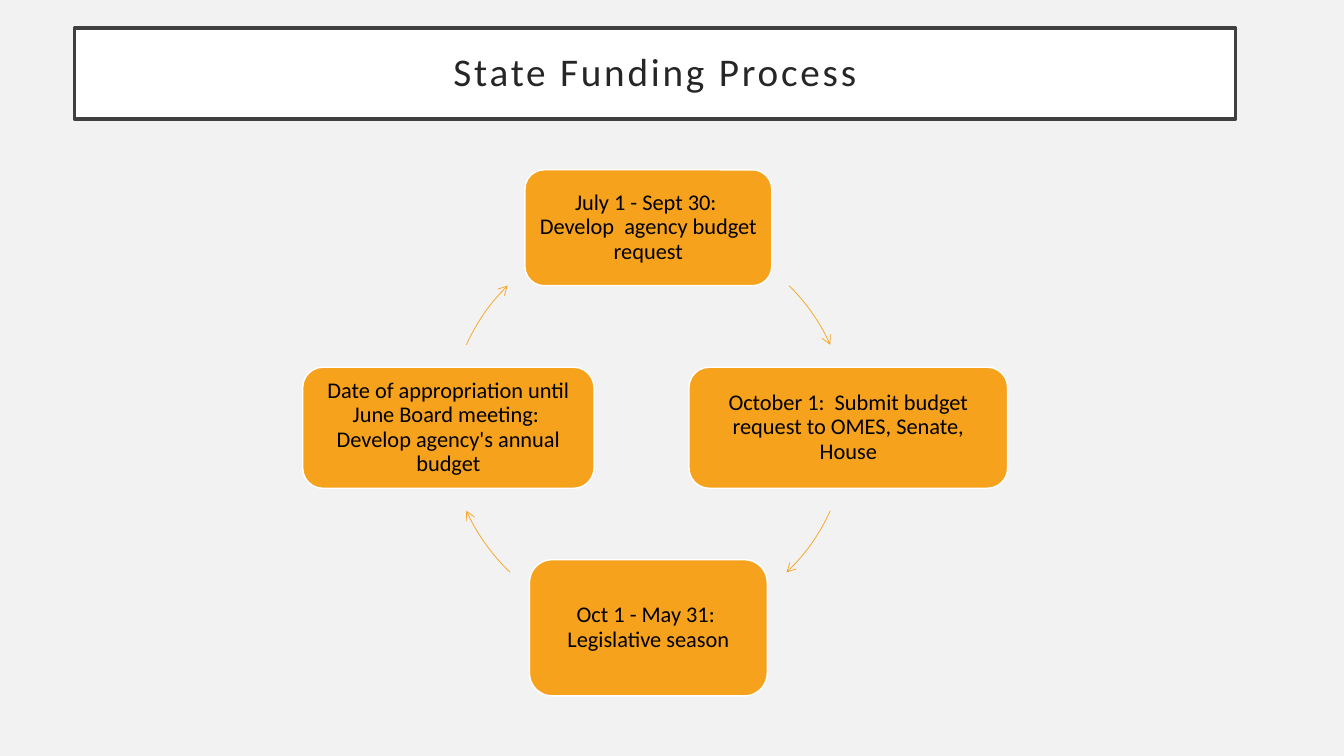
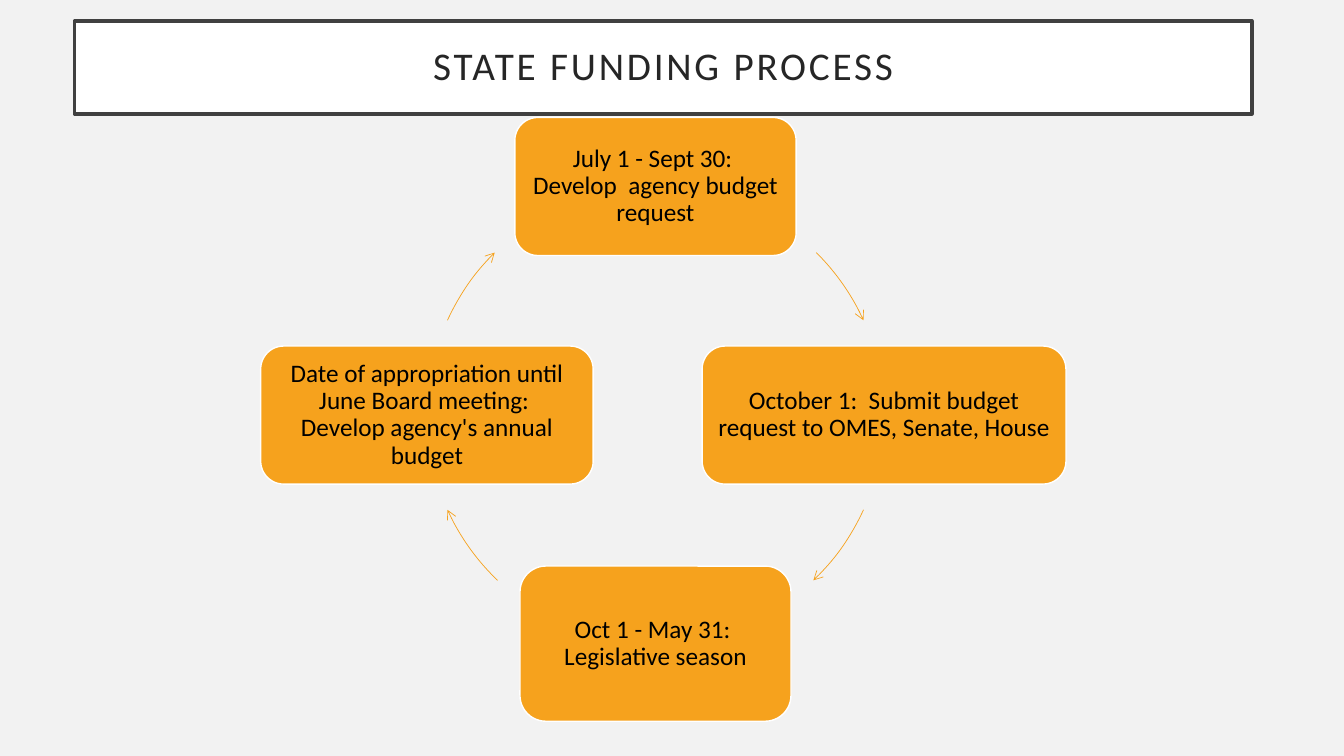
from math import cos, radians, sin

from pptx import Presentation
from pptx.dml.color import RGBColor
from pptx.enum.shapes import MSO_SHAPE
from pptx.enum.text import MSO_ANCHOR, MSO_AUTO_SIZE, PP_ALIGN
from pptx.oxml.ns import qn
from pptx.util import Cm, Pt
from lxml.etree import SubElement

HUES = {"back": "F2F2F2", "band": "FFFFFF", "frame": "404040",
        "title": "262626", "box": "F6A21D", "edge": "FFFFFF", "text": "000000"}
FONT = "Calibri"

STEPS = [
    "July 1 - Sept 30:  Develop  agency budget request",
    "October 1:  Submit budget request to OMES, Senate, House",
    "Oct 1 - May 31:  Legislative season",
    "Date of appropriation until June Board meeting:  Develop agency's annual budget",
]
# Direction of each step from the centre, and the arc that follows it, in degrees
ANGLES = [-90, 0, 90, 180]
ARCS = [(314.7, 335.5), (24.5, 46.3), (133.7, 155.5), (204.5, 225.3)]

# Lengths in cm: title box, centre and radius of the ring, size of each step
SLIDES = [
    {"title": "State Funding Process", "band": (1.88, 0.71, 29.26, 2.29),
     "ring": (16.34, 10.78, 5.04), "font": 16,
     "sizes": [(6.22, 2.92), (8.03, 3.05), (5.99, 3.43), (7.34, 3.05)]},
    {"title": "STATE FUNDING PROCESS", "band": (1.88, 0.53, 29.67, 2.34),
     "ring": (16.52, 10.46, 5.76), "font": 18,
     "sizes": [(7.09, 3.48), (9.17, 3.48), (6.83, 3.91), (8.38, 3.48)]},
]


def paint(shape, fill, line, width):
    """Set fill and outline; a fill of None leaves the shape hollow."""
    if fill:
        shape.fill.solid()
        shape.fill.fore_color.rgb = RGBColor.from_string(HUES[fill])
    else:
        shape.fill.background()
    shape.line.color.rgb = RGBColor.from_string(HUES[line])
    shape.line.width = Pt(width)


def write(shape, text, size, hue, inset):
    """Put one centred paragraph in the shape and return its run."""
    frame = shape.text_frame
    frame.text = text
    frame.word_wrap = True
    frame.auto_size = MSO_AUTO_SIZE.NONE
    frame.vertical_anchor = MSO_ANCHOR.MIDDLE
    frame.margin_left = frame.margin_right = Cm(inset)
    frame.margin_top = frame.margin_bottom = Cm(inset)
    para = frame.paragraphs[0]
    para.alignment = PP_ALIGN.CENTER
    para.line_spacing = 0.9
    run = para.runs[0]
    run.font.name = FONT
    run.font.size = Pt(size)
    run.font.color.rgb = RGBColor.from_string(HUES[hue])
    return run


prs = Presentation()
prs.slide_width, prs.slide_height = Cm(33.87), Cm(19.05)
back = prs.slide_master.background.fill
back.solid()
back.fore_color.rgb = RGBColor.from_string(HUES["back"])

for page in SLIDES:
    slide = prs.slides.add_slide(prs.slide_layouts[5])
    title = slide.shapes.title
    title.left, title.top, title.width, title.height = map(Cm, page["band"])
    paint(title, "band", "frame", 2.5)
    run = write(title, page["title"], 28, "title", 0.51)
    run.font._element.set("spc", "200")

    x, y, r = page["ring"]
    for step, angle, (w, h), arc in zip(STEPS, ANGLES, page["sizes"], ARCS):
        left = x + r * cos(radians(angle)) - w / 2
        top = y + r * sin(radians(angle)) - h / 2
        box = slide.shapes.add_shape(MSO_SHAPE.ROUNDED_RECTANGLE,
                                     Cm(left), Cm(top), Cm(w), Cm(h))
        box.shadow.inherit = False
        paint(box, "box", "edge", 1)
        write(box, step, page["font"], "text", 0.18)

        curve = slide.shapes.add_shape(MSO_SHAPE.ARC, Cm(x - r), Cm(y - r),
                                       Cm(2 * r), Cm(2 * r))
        curve.shadow.inherit = False
        for i, end in enumerate(arc):
            curve.adjustments[i] = end * 0.6  # 60000ths of a degree over 100000
        paint(curve, None, "box", 0.5)
        SubElement(curve.line._get_or_add_ln(), qn("a:tailEnd"), type="arrow")

prs.save("out.pptx")
